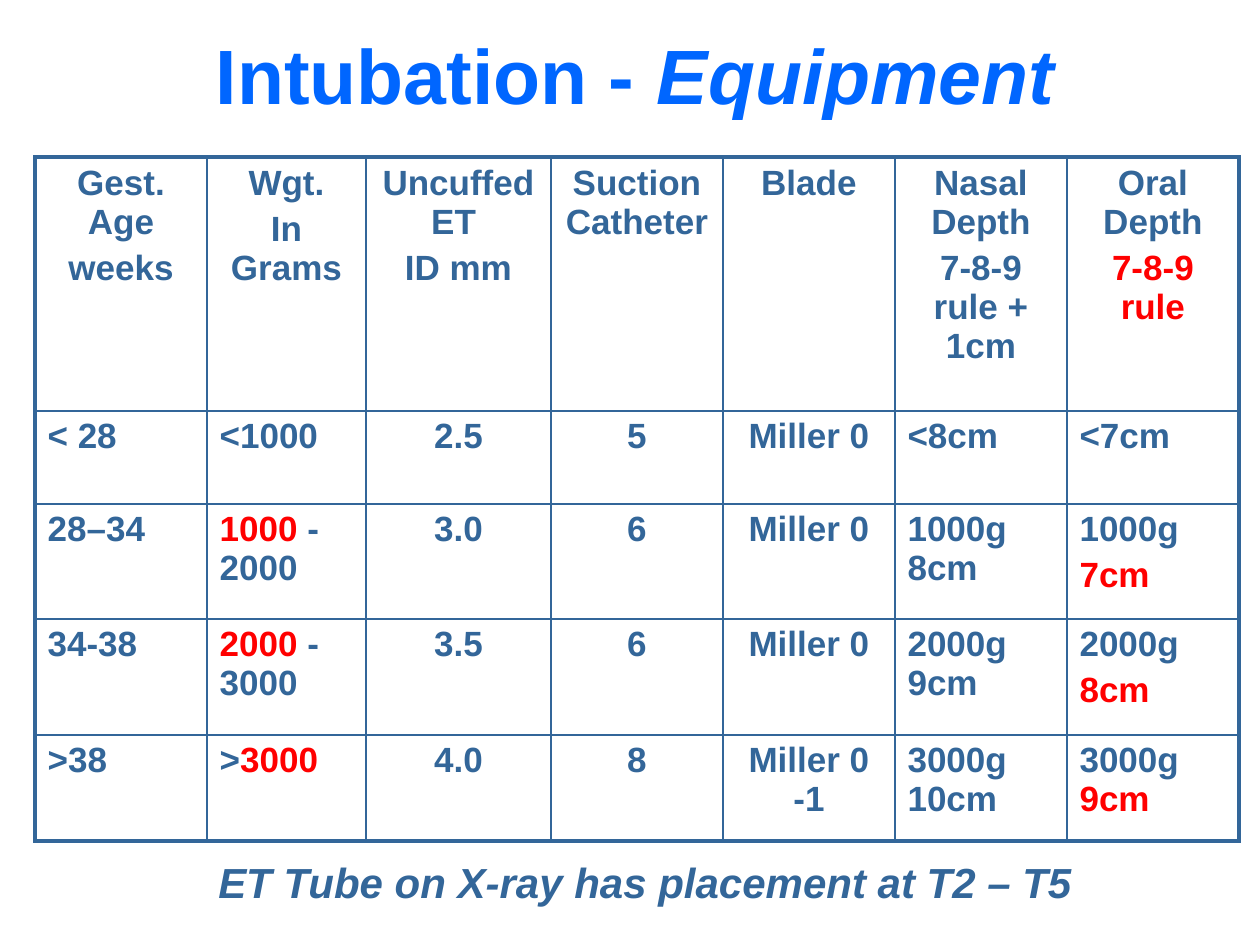
from lxml import etree
from pptx import Presentation
from pptx import util as u
from pptx.dml.color import RGBColor
from pptx.enum import text
from pptx.oxml.ns import qn

BLUE, SLATE, RED = "0066FF", "336699", "FF0000"

# Content: each line is a paragraph, and *stars* mark red words
TITLE = [("Intubation - ", False), ("Equipment", True)]
CAPTION = "ET Tube on X-ray has placement at T2 – T5"
HEADINGS = ["Gest. Age\nweeks", "Wgt.\nIn Grams", "Uncuffed ET \nID mm", "Suction Catheter",
            "Blade", "Nasal Depth\n7-8-9 rule + 1cm", "Oral Depth\n*7-8-9 rule*"]
SIZES = [
    ["< 28", "<1000", "2.5", "5", "Miller 0", "<8cm", "<7cm"],
    ["28–34", "*1000* - 2000", "3.0", "6", "Miller 0", "1000g 8cm", "1000g\n*7cm*"],
    ["34-38", "*2000* - 3000", "3.5", "6", "Miller 0", "2000g 9cm", "2000g\n*8cm*"],
    [">38", ">*3000*", "4.0", "8", "Miller 0 -1", "3000g 10cm", "3000g *9cm*"],
]
CENTERED_COLUMNS = (2, 3, 4)

# Layout in px
TITLE_BOX = (53, 34, 1165, 92)
TABLE_ORIGIN = (35, 157)
COLUMN_WIDTHS = [172, 159, 185, 172, 172, 172, 172]
ROW_HEIGHTS = [254, 93, 115, 116, 106]
CAPTION_BOX = (73, 850, 1144, 63)
OUTER, INNER = 2.25, 1


def px(n):
    return u.Emu(round(n * 914400 / 126))


def color(value):
    return RGBColor.from_string(value)


def add_run(paragraph, words, size, ink, italic=False):
    run = paragraph.add_run()
    run.text = words
    look = {"name": "Arial", "size": u.Pt(size), "bold": True, "italic": italic}
    for attribute, value in look.items():
        setattr(run.font, attribute, value)
    run.font.color.rgb = color(ink)


def write_cell(cell, content, centered):
    for i, line in enumerate(content.split("\n")):
        frame = cell.text_frame
        paragraph = frame.add_paragraph() if i else frame.paragraphs[0]
        paragraph.alignment = text.PP_ALIGN.CENTER if centered else text.PP_ALIGN.LEFT
        if i:
            paragraph.space_before = u.Pt(4)
        for j, words in enumerate(line.split("*")):
            if words:
                add_run(paragraph, words, 20, RED if j % 2 else SLATE)


def set_borders(cell, widths):
    properties = cell._tc.get_or_add_tcPr()
    for side, width in widths.items():
        line = etree.SubElement(properties, qn(f"a:ln{side}"), w=str(u.Pt(width)))
        fill = etree.SubElement(line, qn("a:solidFill"))
        etree.SubElement(fill, qn("a:srgbClr"), val=SLATE)


prs = Presentation()
prs.slide_width, prs.slide_height = px(1260), px(945)
slide = prs.slides.add_slide(prs.slide_layouts[5])

# Title
title = slide.shapes.title
title.left, title.top, title.width, title.height = map(px, TITLE_BOX)
title.text_frame.auto_size = text.MSO_AUTO_SIZE.NONE
title.text_frame.vertical_anchor = text.MSO_ANCHOR.BOTTOM
heading = title.text_frame.paragraphs[0]
heading.alignment = text.PP_ALIGN.CENTER
for words, italic in TITLE:
    add_run(heading, words, 44, BLUE, italic)

# Equipment table
rows = [HEADINGS] + SIZES
last_row, last_column = len(rows) - 1, len(HEADINGS) - 1
equipment = slide.shapes.add_table(
    len(rows), len(HEADINGS), *map(px, TABLE_ORIGIN),
    px(sum(COLUMN_WIDTHS)), px(sum(ROW_HEIGHTS))).table
equipment.first_row = equipment.horz_banding = False
for column, width in zip(equipment.columns, COLUMN_WIDTHS):
    column.width = px(width)
for row, height in zip(equipment.rows, ROW_HEIGHTS):
    row.height = px(height)
for r, contents in enumerate(rows):
    for c, content in enumerate(contents):
        cell = equipment.cell(r, c)
        write_cell(cell, content, r == 0 or c in CENTERED_COLUMNS)
        on_edge = {"L": c == 0, "R": c == last_column, "T": r == 0, "B": r == last_row}
        set_borders(cell, {side: OUTER if edge else INNER for side, edge in on_edge.items()})
        cell.fill.background()

# Caption
caption = slide.shapes.add_textbox(*map(px, CAPTION_BOX)).text_frame
caption.word_wrap = True
caption.auto_size = text.MSO_AUTO_SIZE.SHAPE_TO_FIT_TEXT
caption.paragraphs[0].alignment = text.PP_ALIGN.CENTER
add_run(caption.paragraphs[0], CAPTION, 24, SLATE, italic=True)

prs.save("out.pptx")
